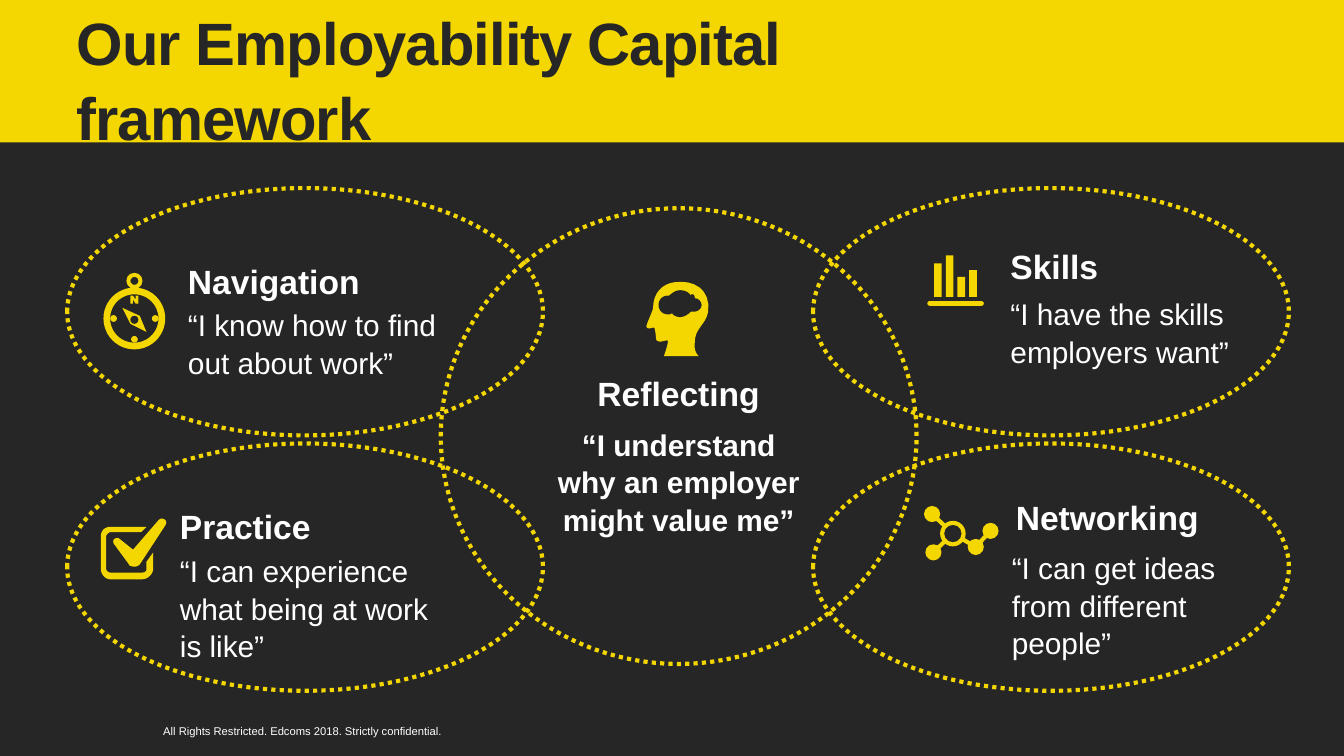
from dataclasses import dataclass
from math import hypot

from lxml.etree import SubElement
from pptx import Presentation
from pptx.dml.color import RGBColor as RGB
from pptx.enum.dml import MSO_LINE
from pptx.enum.shapes import MSO_CONNECTOR, MSO_SHAPE as SHAPE
from pptx.enum.text import MSO_ANCHOR as ANCHOR, PP_ALIGN as ALIGN
from pptx.oxml.ns import qn
from pptx.util import Inches, Pt


@dataclass(frozen=True)
class Theme:
    dark: RGB = RGB(0x26, 0x26, 0x26)
    yellow: RGB = RGB(0xF4, 0xD6, 0x00)
    white: RGB = RGB(0xFF, 0xFF, 0xFF)
    font: str = "Arial"
    title: int = 32
    heading: int = 18
    quote: int = 16
    footer: int = 6
    line: float = 2.25


T = Theme()
COLS = 100                      # square grid: 100 columns across the slide
UNIT = Inches(10) / COLS
FINE = 0.1                      # icon outlines use tenths of a column

# Outlines: start point, then (x, y) lines and (x1, y1, x2, y2, x, y) curves
HEAD = [(46, 24), (48, 7, 35, 0, 21, 2), (12, 3, 5, 10, 5, 21),
        (5, 23, 0, 33, 0, 35), (1, 38, 5, 35, 6, 36), (8, 43, 6, 45, 9, 46),
        (11, 47, 16, 44, 16, 46), (16, 49, 13, 57, 13, 57), (39, 57),
        (39, 57, 35, 54, 36, 47), (36, 36, 44, 34, 46, 24)]
BRAIN = [(35, 24), (35, 24, 34, 24, 33, 24), (31, 26, 28, 28, 25, 28),
         (23, 28, 20, 27, 19, 25), (18, 26, 17, 26, 16, 26),
         (12, 26, 9, 23, 9, 19), (9, 15, 12, 12, 16, 12), (17, 12),
         (19, 10, 22, 8, 25, 8), (28, 8, 31, 9, 33, 12),
         (33, 11, 34, 11, 34, 11), (35, 11, 36, 12, 36, 14),
         (39, 14, 41, 17, 41, 19), (41, 22, 38, 24, 35, 24)]
TICK = [(14, 16), (13, 15, 12, 15, 10, 16), (9, 17, 9, 19, 10, 20), (21, 35),
        (21, 35, 21, 36, 22, 36), (24, 37, 27, 37, 29, 35), (48, 6),
        (49, 4, 49, 3, 48, 2), (46, 0, 44, 1, 43, 2), (24, 24)]
CHECKBOX = [(7, 7), (3, 7, 0, 10, 0, 14), (0, 38), (0, 42, 3, 46, 7, 46),
            (31, 46), (35, 46, 39, 42, 39, 38), (39, 26), (34, 33), (34, 38),
            (34, 40, 33, 41, 31, 41), (7, 41), (6, 41, 4, 40, 4, 38), (4, 14),
            (4, 13, 6, 11, 7, 11), (30, 11), (34, 7)]
NEEDLE = [(0, 0), (13, 6), (18, 18), (6, 12)]
LETTER_N = [(0, 0), (2, 0), (4, 3), (4, 0), (6, 0), (6, 6), (4, 6), (2, 3),
            (2, 6), (0, 6)]


def grid(*lengths):
    return [round(n * UNIT) for n in lengths]


def paint(sp, color):
    sp.shadow.inherit = False
    sp.fill.solid()
    sp.fill.fore_color.rgb = color
    sp.line.fill.background()
    return sp


def shape(s, kind, x, y, w, h, color=T.yellow):
    return paint(s.shapes.add_shape(kind, *grid(x, y, w, h)), color)


def disc(s, cx, cy, d, color=T.yellow):
    return shape(s, SHAPE.OVAL, cx - d / 2, cy - d / 2, d, d, color)


def ring(s, cx, cy, d, thickness):
    sp = shape(s, SHAPE.DONUT, cx - d / 2, cy - d / 2, d, d)
    sp.adjustments[0] = thickness / d


def flatten(path, steps=8):
    """Turn lines and cubic curves into a list of points."""
    points = [path[0]]
    for seg in path[1:]:
        if len(seg) == 2:
            points.append(seg)
            continue
        ctrl = [points[-1], seg[:2], seg[2:4], seg[4:]]
        for i in range(1, steps + 1):
            t = i / steps
            k = ((1 - t) ** 3, 3 * t * (1 - t) ** 2, 3 * t * t * (1 - t), t ** 3)
            points.append(tuple(sum(a * c[n] for a, c in zip(k, ctrl))
                                for n in (0, 1)))
    return points


def outline(s, x, y, path, color=T.yellow):
    points = [grid(x + px * FINE, y + py * FINE) for px, py in flatten(path)]
    fb = s.shapes.build_freeform(*points[0], scale=1.0)
    fb.add_line_segments(points[1:], close=True)
    paint(fb.convert_to_shape(), color)


def write(tf, words, size, color=T.white, bold=False, align=ALIGN.LEFT):
    tf.word_wrap = True
    p = tf.paragraphs[0]
    p.text = words
    p.alignment = align
    p.line_spacing = 1.05
    f = p.font
    f.name, f.size, f.bold, f.color.rgb = T.font, Pt(size), bold, color
    return p


def no_margins(tf):
    tf.margin_left = tf.margin_right = tf.margin_top = tf.margin_bottom = 0
    tf.vertical_anchor = ANCHOR.MIDDLE


def heading(s, box, words, align=ALIGN.LEFT):
    tf = s.shapes.add_textbox(*grid(*box)).text_frame
    tf.vertical_anchor = ANCHOR.MIDDLE
    write(tf, words, T.heading, bold=True, align=align)


def quote(s, box, words, bold=False, align=ALIGN.LEFT):
    tf = s.shapes.add_textbox(*grid(*box)).text_frame
    write(tf, words, T.quote, bold=bold, align=align)


def title(s, words):
    sp = s.shapes.title
    sp.left, sp.top, sp.width, sp.height = grid(5.7, 3.8, 61.7, 3.9)
    no_margins(sp.text_frame)
    p = write(sp.text_frame, words, T.title, T.dark, bold=True)
    p.runs[0].font._element.set("spc", "-50")


def footer(s, words):
    tf = s.shapes.add_textbox(*grid(5, 53.1, 35, 2.6)).text_frame
    no_margins(tf)
    write(tf, words, T.footer, align=ALIGN.CENTER)


def dotted_oval(s, x, y, w, h, filled=False):
    sp = shape(s, SHAPE.OVAL, x, y, w, h, T.dark)
    if not filled:
        sp.fill.background()
    sp.line.color.rgb = T.yellow
    sp.line.width = Pt(T.line)
    sp.line.dash_style = MSO_LINE.ROUND_DOT


def link(s, x1, y1, x2, y2):
    c = s.shapes.add_connector(MSO_CONNECTOR.STRAIGHT, *grid(x1, y1, x2, y2))
    c.line.color.rgb = T.yellow
    c.line.width = Pt(T.line)
    SubElement(c._element.spPr, qn("a:effectLst"))


def compass(s, cx, cy):
    ring(s, cx, cy - 2.8, 1.2, 0.3)
    ring(s, cx, cy, 4.6, 0.5)
    for dx, dy in ((-1.55, 0), (1.55, 0), (0, 1.55)):
        disc(s, cx + dx, cy + dy, 0.5)
    outline(s, cx - 0.3, cy - 1.7, LETTER_N)
    outline(s, cx - 0.9, cy - 0.8, NEEDLE)
    disc(s, cx, cy + 0.1, 0.6, T.dark)


def bar_icon(s, x, base):
    shape(s, SHAPE.ROUNDED_RECTANGLE, x, base + 0.3, 4.2, 0.35).adjustments[0] = 0.5
    for i, h in enumerate((2.5, 3.1, 1.5, 2)):
        shape(s, SHAPE.RECTANGLE, x + 0.5 + i * 0.87, base - h, 0.57, h)


def network(s, cx, cy):
    left_top, left_low = (cx - 1.55, cy - 1.45), (cx - 1.45, cy + 1.4)
    near, far = (cx + 1.7, cy + 1), (cx + 2.8, cy - 0.2)
    ring(s, cx, cy, 1.9, 0.3)
    for x, y in (left_top, left_low, near):
        k = 0.8 / hypot(x - cx, y - cy)      # start on the hub's rim
        link(s, cx + k * (x - cx), cy + k * (y - cy), x, y)
    link(s, *near, *far)
    for node in (left_top, left_low, near, far):
        disc(s, *node, 1.2)


def main():
    prs = Presentation()
    prs.slide_width, prs.slide_height = Inches(10), Inches(5.625)
    s = prs.slides.add_slide(prs.slide_layouts[5])
    s.background.fill.solid()
    s.background.fill.fore_color.rgb = T.dark

    # Title band; the title goes back on top of it
    band = shape(s, SHAPE.RECTANGLE, 0, 0, COLS, 10.6)
    s.shapes.title._element.addprevious(band._element)
    title(s, "Our Employability Capital framework")
    footer(s, "All Rights Restricted. Edcoms 2018. Strictly confidential.")

    # Overlapping ovals: one in the centre, two by two at the sides
    dotted_oval(s, 32.8, 15.5, 35.4, 33.9, filled=True)
    for x in (5, 60.5):
        for y in (14, 33):
            dotted_oval(s, x, y, 35.4, 18.4)

    # Icons
    compass(s, 10, 23.7)
    outline(s, 7.5, 38.5, TICK)
    outline(s, 7.5, 38.5, CHECKBOX)
    bar_icon(s, 69, 22.1)
    network(s, 70.9, 39.7)
    outline(s, 48.1, 20.8, HEAD)
    outline(s, 48.1, 20.8, BRAIN, T.dark)

    # Headings and quotes
    sides = [
        ("Navigation", (13, 18.7, 16.9, 4.3),
         "“I know how to find out about work”", (13, 22.2, 23.5, 6.4)),
        ("Practice", (12.4, 36.9, 13.5, 4.4),
         "“I can experience what being at work is like”", (12.4, 40.5, 21.1, 9.1)),
        ("Skills", (74.2, 18.1, 9.6, 3.3),
         "“I have the skills employers want”", (74.2, 21.4, 20.5, 6.4)),
        ("Networking", (74.6, 36.4, 17.6, 4),
         "“I can get ideas from different people”", (74.3, 40.3, 18.2, 9.1)),
    ]
    for name, name_box, words, words_box in sides:
        heading(s, name_box, name)
        quote(s, words_box, words)
    heading(s, (43, 27.2, 15, 3.9), "Reflecting", ALIGN.CENTER)
    quote(s, (39.9, 31.1, 21.2, 9.1),
          "“I understand why an employer might value me”", True, ALIGN.CENTER)

    prs.save("out.pptx")


if __name__ == "__main__":
    main()
